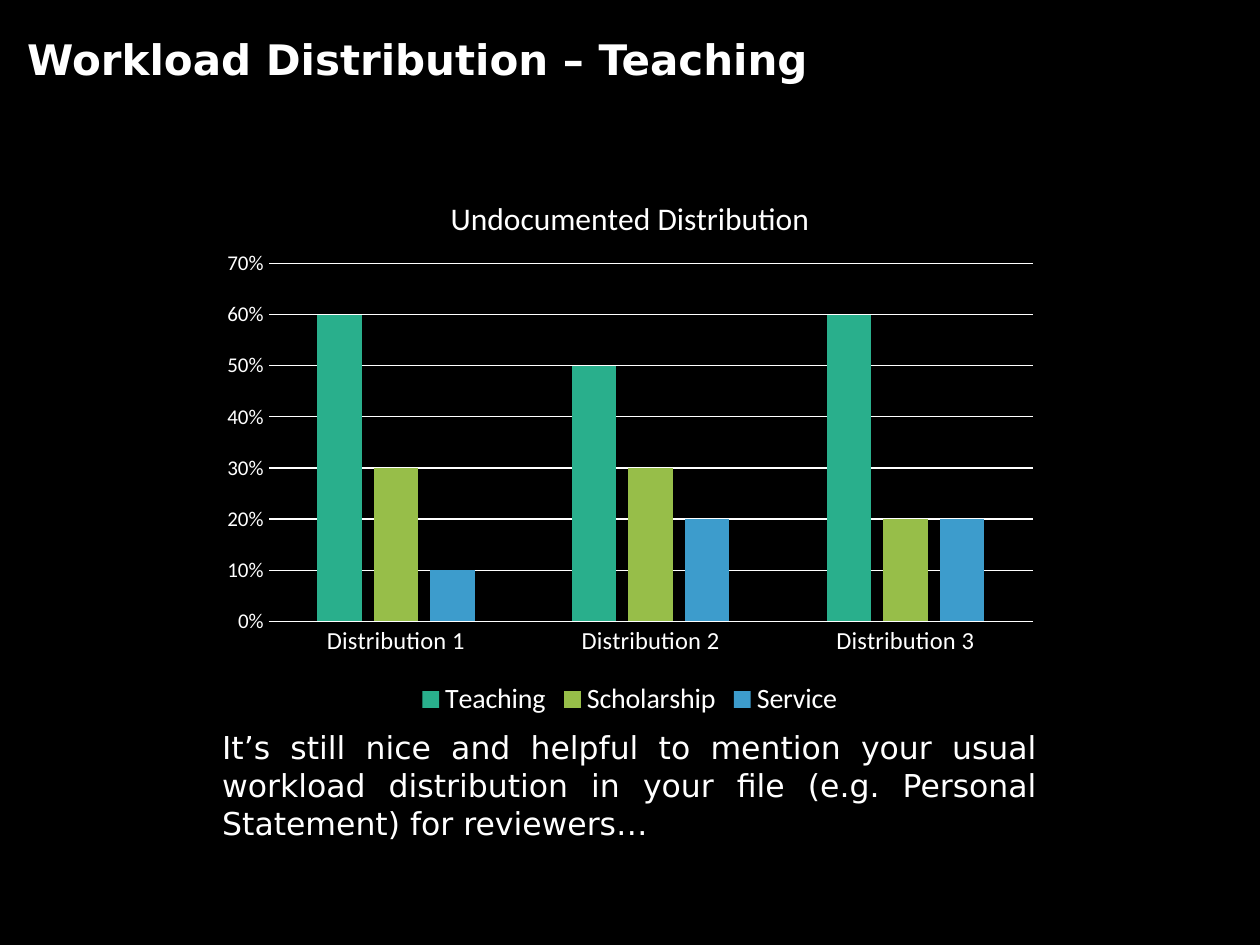
"""Build the workload distribution slide with a clustered column chart."""
from lxml import etree
from pptx import Presentation
from pptx import util as u
from pptx.chart import data
from pptx.dml.color import RGBColor
from pptx.enum import chart as charts, text
from pptx.oxml import ns

COLOURS = {
    "background": "000000",
    "foreground": "FFFFFF",
    "Teaching": "29AF8C",
    "Scholarship": "97BE49",
    "Service": "3D9CCC",
}
WORKLOADS = {
    "Teaching": (0.6, 0.5, 0.6),
    "Scholarship": (0.3, 0.3, 0.2),
    "Service": (0.1, 0.2, 0.2),
}


def style_font(font, size, name="Calibri", bold=False):
    font.size = u.Pt(size)
    font.name = name
    font.bold = bold
    font.color.rgb = RGBColor.from_string(COLOURS["foreground"])


def place(element, index, **values):
    for previous in element.findall(ns.qn("c:layout")):
        element.remove(previous)
    layout = etree.Element(ns.qn("c:layout"))
    manual = etree.SubElement(layout, ns.qn("c:manualLayout"))
    for tag, value in values.items():
        etree.SubElement(manual, ns.qn(f"c:{tag}")).set("val", str(value))
    element.insert(index, layout)


presentation = Presentation()
presentation.slide_width = u.Cm(25.4)
presentation.slide_height = u.Cm(19.05)
slide = presentation.slides.add_slide(presentation.slide_layouts[6])
slide.background.fill.solid()
slide.background.fill.fore_color.rgb = RGBColor.from_string(COLOURS["background"])

content_left, content_width = u.Cm(4.23), u.Cm(16.93)

chart_data = data.CategoryChartData(number_format="0%")
chart_data.categories = [f"Distribution {number}" for number in (1, 2, 3)]
for name, values in WORKLOADS.items():
    chart_data.add_series(name, values)
chart = slide.shapes.add_chart(
    charts.XL_CHART_TYPE.COLUMN_CLUSTERED,
    content_left, u.Cm(3.28), content_width, u.Cm(11.28), chart_data,
).chart
style_font(chart.font, 10)

chart.has_title = True
chart.chart_title.text_frame.text = "Undocumented Distribution"
style_font(chart.chart_title.text_frame.paragraphs[0].runs[0].font, 18)
chart.chart_title.include_in_layout = False
place(chart.element.find(".//" + ns.qn("c:title")), 1,
      xMode="edge", yMode="edge", x=0.28, y=0.05)
place(chart.element.find(".//" + ns.qn("c:plotArea")), 0,
      layoutTarget="inner", xMode="edge", yMode="edge",
      x=0.07, y=0.18, w=0.91, h=0.64)

chart.has_legend = True
chart.legend.position = charts.XL_LEGEND_POSITION.BOTTOM
chart.legend.include_in_layout = False
style_font(chart.legend.font, 16)

plot = chart.plots[0]
plot.gap_width = 219
plot.overlap = -27
plot.vary_by_categories = False
for series in plot.series:
    series.format.fill.solid()
    series.format.fill.fore_color.rgb = RGBColor.from_string(COLOURS[series.name])

for axis, size in ((chart.category_axis, 14), (chart.value_axis, 12)):
    axis.major_tick_mark = charts.XL_TICK_MARK.NONE
    axis.minor_tick_mark = charts.XL_TICK_MARK.NONE
    style_font(axis.tick_labels.font, size)
value_axis = chart.value_axis
value_axis.minimum_scale = 0
value_axis.maximum_scale = 0.7
value_axis.major_unit = 0.1
value_axis.tick_labels.number_format = "0%"
value_axis.tick_labels.number_format_is_linked = False
value_axis.format.line.fill.background()
for line in (chart.category_axis.format.line, value_axis.major_gridlines.format.line):
    line.width = u.Pt(0.75)
    line.color.rgb = RGBColor.from_string(COLOURS["foreground"])

text_boxes = (
    ("Workload Distribution – Teaching", u.Cm(0.3), u.Cm(0.56), u.Cm(1.28),
     24, True, text.PP_ALIGN.LEFT),
    ("It’s still nice and helpful to mention your usual workload distribution "
     "in your file (e.g. Personal Statement) for reviewers…",
     content_left, u.Cm(14.56), u.Cm(2.56), 18, False, text.PP_ALIGN.JUSTIFY),
)
for words, left, top, height, size, bold, alignment in text_boxes:
    shape = slide.shapes.add_textbox(left, top, content_width, height)
    shape.text_frame.word_wrap = True
    shape.text_frame.auto_size = text.MSO_AUTO_SIZE.SHAPE_TO_FIT_TEXT
    shape.text_frame.text = words
    paragraph = shape.text_frame.paragraphs[0]
    paragraph.alignment = alignment
    style_font(paragraph.runs[0].font, size, "DejaVu Sans", bold)

presentation.save("out.pptx")
